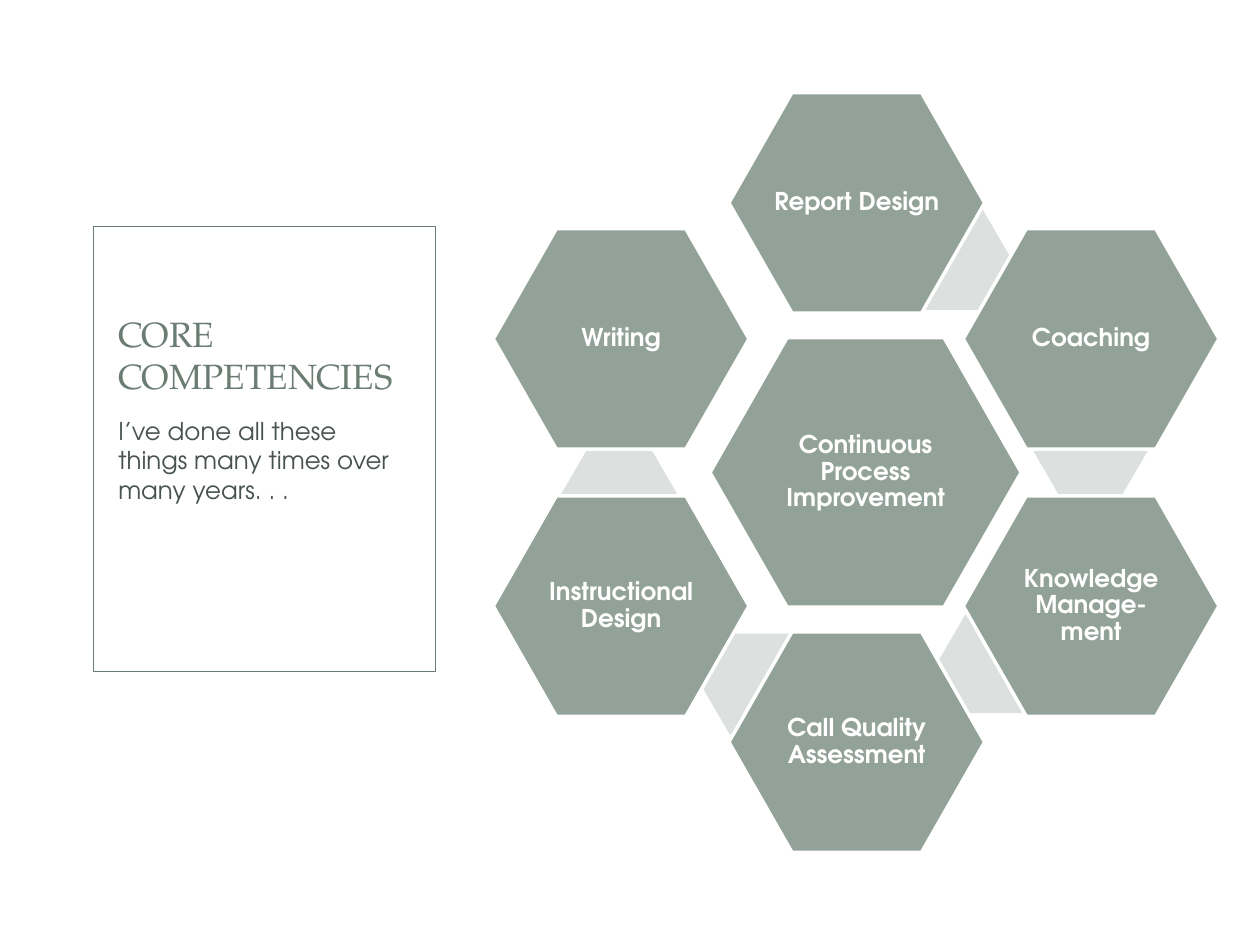
from pptx import Presentation
from pptx.dml.color import RGBColor
from pptx.enum.shapes import MSO_SHAPE
from pptx.enum.text import MSO_ANCHOR, PP_ALIGN
from pptx.util import Inches, Pt

COLORS = {"sage": "93A299", "link": "DCE0DE", "frame": "6B7D72",
          "body": "47534C", "white": "FFFFFF"}
SANS, SERIF = "TeX Gyre Adventor", "TeX Gyre Pagella"


def add_block(kind, x, y, w, h, fill=None, line=None, width=0):
    s = slide.shapes.add_shape(kind, Inches(x), Inches(y), Inches(w), Inches(h))
    s.shadow.inherit = False
    if fill:
        s.fill.solid()
        s.fill.fore_color.rgb = RGBColor.from_string(COLORS[fill])
    else:
        s.fill.background()
    if line:
        s.line.color.rgb = RGBColor.from_string(COLORS[line])
        s.line.width = Pt(width)
    else:
        s.line.fill.background()
    return s


def set_text(s, text, font, size, color, anchor, align=PP_ALIGN.LEFT):
    tf = s.text_frame
    tf.word_wrap = True
    tf.vertical_anchor = anchor
    tf.text = text
    p = tf.paragraphs[0]
    p.alignment = align
    p.font.name = font
    p.font.size = Pt(size)
    p.font.color.rgb = RGBColor.from_string(COLORS[color])
    return tf


prs = Presentation()
prs.slide_width, prs.slide_height = Inches(10), Inches(7.5)
slide = prs.slides.add_slide(prs.slide_layouts[5])

add_block(MSO_SHAPE.RECTANGLE, 0.74, 1.8, 2.72, 3.53, line="frame", width=0.5)

title = slide.shapes.title
title.left, title.top = Inches(0.84), Inches(1.9)
title.width, title.height = Inches(2.51), Inches(1.3)
set_text(title, "CORE COMPETENCIES", SERIF, 20, "frame", MSO_ANCHOR.BOTTOM)

body = slide.shapes.add_textbox(Inches(0.84), Inches(3.25), Inches(2.51), Inches(1.92))
set_text(body, "I’ve done all these things many times over many years. . .",
         SANS, 14, "body", MSO_ANCHOR.TOP)

center = (2.47, 2.14, 1.65, 1.43)
outer = (2.03, 1.75, 1.35, 1.17)
left, middle, right = 4.93, 6.8, 8.66
hexagons = [
    ("Continuous Process Improvement", 6.87, 3.75, center, None),
    ("Report Design", middle, 1.61, outer, (7.1, 1.66)),
    ("Coaching", right, 2.69, outer, (8.19, 3.16)),
    ("Knowledge Manage-ment", right, 4.81, outer, (7.44, 4.86)),
    ("Call Quality Assessment", middle, 5.89, outer, (5.56, 5.03)),
    ("Instructional Design", left, 4.81, outer, (4.45, 3.53)),
    ("Writing", left, 2.69, outer, None),
]
for text, cx, cy, (w, h, text_w, text_h), link in hexagons:
    if link:
        s = add_block(MSO_SHAPE.HEXAGON, *link, 0.93, 0.8, "link")
        s.adjustments[0] = 0.29
    s = add_block(MSO_SHAPE.HEXAGON, cx - w / 2, cy - h / 2, w, h, "sage", "white", 2)
    s.adjustments[0] = 0.286
    label = slide.shapes.add_textbox(Inches(cx - text_w / 2), Inches(cy - text_h / 2),
                                     Inches(text_w), Inches(text_h))
    tf = set_text(label, text, SANS, 14, "white", MSO_ANCHOR.MIDDLE, PP_ALIGN.CENTER)
    tf.margin_left = tf.margin_right = Inches(0.01)
    tf.margin_top = tf.margin_bottom = Inches(0.02)
    tf.paragraphs[0].font.bold = True
    tf.paragraphs[0].line_spacing = 0.9

prs.save("out.pptx")
